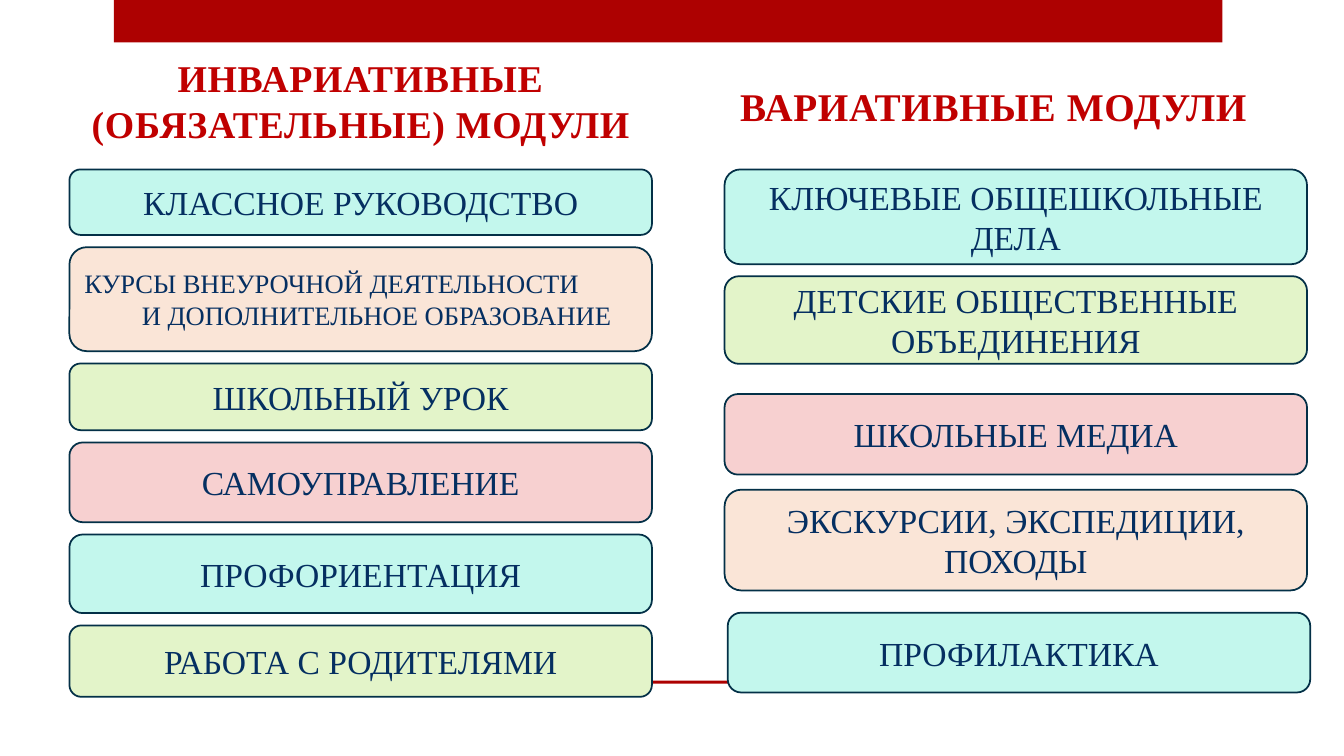
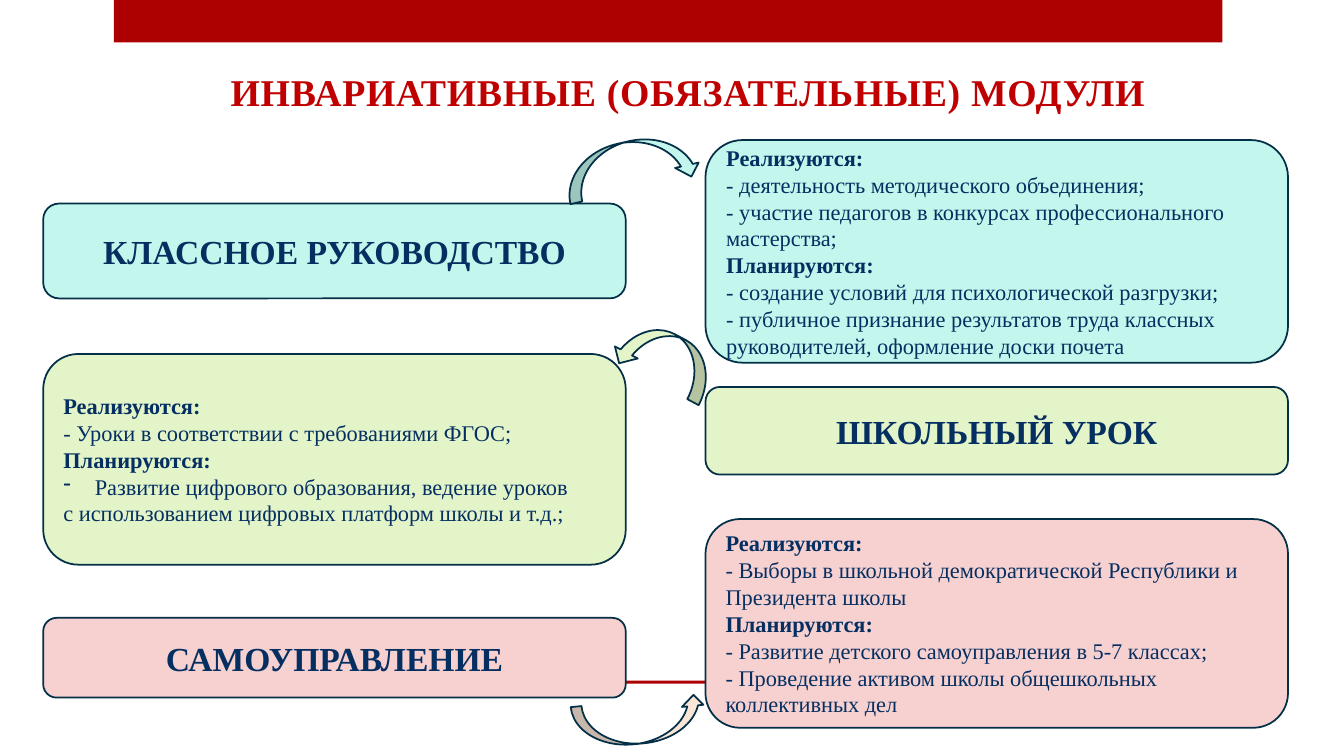
from dataclasses import dataclass

from pptx import Presentation
from pptx.dml.color import RGBColor
from pptx.enum.shapes import MSO_SHAPE
from pptx.enum.text import MSO_ANCHOR, PP_ALIGN
from pptx.oxml.ns import qn
from pptx.util import Cm, Pt

RECTANGLE = MSO_SHAPE.RECTANGLE
ROUNDED_BOX = MSO_SHAPE.FLOWCHART_ALTERNATE_PROCESS
CURVED_ARROW = MSO_SHAPE.CURVED_DOWN_ARROW
LEFT, CENTER = PP_ALIGN.LEFT, PP_ALIGN.CENTER
MIDDLE, BOTTOM = MSO_ANCHOR.MIDDLE, MSO_ANCHOR.BOTTOM

FONT = "Times New Roman"
BAND, TITLE, TEXT, OUTLINE = "AD0101", "C00000", "052F61", "033047"
MINT, GREEN, PEACH, PINK = "C3F7ED", "E3F4C9", "FAE5D7", "F7D0D0"

BOX_WIDTH = 14.68
MODULES_TOP = 4.27
MODULES_GAP = 0.31
REQUIRED_LEFT, OPTIONAL_LEFT = 1.75, 18.26
DETAILS_LEFT, DETAILS_RIGHT = 1.09, 17.78
DONE, PLANNED = "Реализуются:", "Планируются:"
REQUIRED_TITLE = "ИНВАРИАТИВНЫЕ (ОБЯЗАТЕЛЬНЫЕ) МОДУЛИ"


@dataclass(frozen=True)
class Line:
    """One paragraph of a box; lengths are in centimetres."""
    text: str
    size: float = 24
    bold: bool = False
    align: PP_ALIGN = CENTER
    indent: float = 0
    bullet: str = ""


@dataclass(frozen=True)
class Module:
    height: float
    fill: str
    lines: tuple[Line, ...]


@dataclass(frozen=True)
class PlacedModule:
    left: float
    top: float
    module: Module


@dataclass(frozen=True)
class Arrow:
    left: float
    top: float
    width: float
    height: float
    rotation: float
    fill: str
    flip: str = ""


def name_of(text: str, bold: bool = False) -> tuple[Line, ...]:
    return (Line(text, bold=bold),)


def details(done: list[str], planned: list[Line | str]) -> tuple[Line, ...]:
    """Lines of a box that lists what is done and what is planned."""
    def item(entry: Line | str) -> Line:
        return entry if isinstance(entry, Line) else Line(entry, 16, align=LEFT)

    return (Line(DONE, 16, True, LEFT), *map(item, done),
            Line(PLANNED, 16, True, LEFT), *map(item, planned))


REQUIRED_MODULES = [
    Module(1.65, MINT, name_of("КЛАССНОЕ РУКОВОДСТВО")),
    Module(2.62, PEACH, (
        Line("КУРСЫ ВНЕУРОЧНОЙ ДЕЯТЕЛЬНОСТИ", 19, align=LEFT),
        Line("И ДОПОЛНИТЕЛЬНОЕ ОБРАЗОВАНИЕ", 19, indent=0.8))),
    Module(1.68, GREEN, name_of("ШКОЛЬНЫЙ УРОК")),
    Module(2.01, PINK, name_of("САМОУПРАВЛЕНИЕ")),
    Module(1.98, MINT, name_of("ПРОФОРИЕНТАЦИЯ")),
    Module(1.8, GREEN, name_of("РАБОТА С РОДИТЕЛЯМИ")),
]

OPTIONAL_MODULES = [
    PlacedModule(OPTIONAL_LEFT, MODULES_TOP,
                 Module(2.39, MINT, name_of("КЛЮЧЕВЫЕ ОБЩЕШКОЛЬНЫЕ ДЕЛА"))),
    PlacedModule(OPTIONAL_LEFT, 6.96,
                 Module(2.21, GREEN, name_of("ДЕТСКИЕ ОБЩЕСТВЕННЫЕ ОБЪЕДИНЕНИЯ"))),
    PlacedModule(OPTIONAL_LEFT, 9.93, Module(2.03, PINK, name_of("ШКОЛЬНЫЕ МЕДИА"))),
    PlacedModule(OPTIONAL_LEFT, 12.34,
                 Module(2.54, PEACH, name_of("ЭКСКУРСИИ, ЭКСПЕДИЦИИ, ПОХОДЫ"))),
    PlacedModule(18.34, 15.44, Module(2.01, MINT, name_of("ПРОФИЛАКТИКА"))),
]

DETAILED_MODULES = [
    PlacedModule(DETAILS_LEFT, 5.13,
                 Module(2.39, MINT, name_of("КЛАССНОЕ РУКОВОДСТВО", True))),
    PlacedModule(DETAILS_RIGHT, 9.75, Module(2.21, GREEN, name_of("ШКОЛЬНЫЙ УРОК", True))),
    PlacedModule(DETAILS_LEFT, 15.57, Module(2.01, PINK, name_of("САМОУПРАВЛЕНИЕ", True))),
    PlacedModule(DETAILS_RIGHT, 3.53, Module(5.61, MINT, details(
        ["- деятельность методического объединения;",
         "- участие педагогов в конкурсах профессионального мастерства;"],
        ["- создание условий для психологической разгрузки;",
         "- публичное признание результатов труда классных руководителей, "
         "оформление доски почета"]))),
    PlacedModule(DETAILS_LEFT, 8.92, Module(5.31, GREEN, details(
        ["- Уроки в соответствии с требованиями ФГОС;"],
        [Line("Развитие цифрового образования, ведение уроков", 16,
              align=LEFT, indent=0.79, bullet="-"),
         "с использованием цифровых платформ школы и т.д.;"]))),
    PlacedModule(DETAILS_RIGHT, 13.08, Module(5.26, PINK, details(
        ["- Выборы в школьной демократической Республики и Президента школы"],
        ["- Развитие детского самоуправления в 5-7 классах;",
         "- Проведение активом школы общешкольных коллективных дел"]))),
]

ARROWS = [
    Arrow(14.2, 3.56, 3.43, 1.22, 347.2, MINT),
    Arrow(15.47, 8.38, 2.59, 1.3, 27.8, GREEN, "flipH"),
    Arrow(14.43, 17.65, 3.38, 1.09, 354.3, PEACH, "flipV"),
]


def color(value: str) -> RGBColor:
    return RGBColor.from_string(value)


def add_text(para, text: str, *, size: float, tint: str = TEXT, bold: bool = False,
             align: PP_ALIGN = CENTER, indent: float = 0, bullet: str = "",
             spacing: float = 0) -> None:
    para.alignment = align
    span = para.add_run()
    span.text = text
    span.font.name = FONT
    span.font.size = Pt(size)
    span.font.bold = bold
    span.font.color.rgb = color(tint)
    if spacing:
        span.font.fill.solid()
        span.font.color.rgb = color(tint)
        span.font._element.set("spc", str(round(spacing * 100)))
    if indent:
        properties = para._p.get_or_add_pPr()
        properties.set("marL", str(Cm(indent)))
        if bullet:
            properties.set("indent", str(-Cm(indent)))
            mark = properties.makeelement(qn("a:buChar"), {"char": bullet})
            properties.append(mark)


def add_figure(page, kind: MSO_SHAPE, left: float, top: float, width: float,
               height: float, fill: str, outline: str = ""):
    figure = page.shapes.add_shape(kind, Cm(left), Cm(top), Cm(width), Cm(height))
    figure.shadow.inherit = False
    figure.fill.solid()
    figure.fill.fore_color.rgb = color(fill)
    if outline:
        figure.line.color.rgb = color(outline)
        figure.line.width = Pt(1.25)
    else:
        figure.line.fill.background()
    return figure


def add_title(page, text: str, left: float, top: float, width: float, height: float,
              size: float = 27) -> None:
    box = page.shapes.add_textbox(Cm(left), Cm(top), Cm(width), Cm(height))
    box.text_frame.word_wrap = True
    box.text_frame.vertical_anchor = BOTTOM
    add_text(box.text_frame.paragraphs[0], text, size=size, tint=TITLE, bold=True, spacing=0.5)


def add_module(page, left: float, top: float, module: Module) -> None:
    box = add_figure(page, ROUNDED_BOX, left, top, BOX_WIDTH, module.height,
                     module.fill, OUTLINE)
    frame = box.text_frame
    frame.word_wrap = True
    frame.vertical_anchor = MIDDLE
    for number, line in enumerate(module.lines):
        para = frame.add_paragraph() if number else frame.paragraphs[0]
        add_text(para, line.text, size=line.size, bold=line.bold, align=line.align,
                 indent=line.indent, bullet=line.bullet)


def add_arrow(page, arrow: Arrow) -> None:
    figure = add_figure(page, CURVED_ARROW, arrow.left, arrow.top, arrow.width,
                        arrow.height, arrow.fill, OUTLINE)
    figure.rotation = arrow.rotation
    if arrow.flip:
        figure.element.spPr.find(qn("a:xfrm")).set(arrow.flip, "1")


def add_page(deck):
    """Blank slide with the red band on top and the thin rule below."""
    page = deck.slides.add_slide(deck.slide_layouts[6])
    for top, height in ((0, 1.07), (17.15, 0.08)):
        add_figure(page, RECTANGLE, 2.87, top, 27.94, height, BAND)
    return page


def add_overview(deck) -> None:
    page = add_page(deck)
    add_title(page, REQUIRED_TITLE, 1.19, 1.3, 15.8, 2.5)
    add_title(page, "ВАРИАТИВНЫЕ МОДУЛИ", 17.53, 2.11, 15.01, 1.27, size=28)
    top = MODULES_TOP
    for module in REQUIRED_MODULES:
        add_module(page, REQUIRED_LEFT, top, module)
        top += module.height + MODULES_GAP
    for placed in OPTIONAL_MODULES:
        add_module(page, placed.left, placed.top, placed.module)


def add_details(deck) -> None:
    page = add_page(deck)
    add_title(page, REQUIRED_TITLE, 2.54, 1.4, 29.59, 1.6)
    for placed in DETAILED_MODULES:
        add_module(page, placed.left, placed.top, placed.module)
    for arrow in ARROWS:
        add_arrow(page, arrow)


def main() -> None:
    deck = Presentation()
    deck.slide_width, deck.slide_height = Cm(33.87), Cm(19.05)
    add_overview(deck)
    add_details(deck)
    deck.save("out.pptx")


if __name__ == "__main__":
    main()
